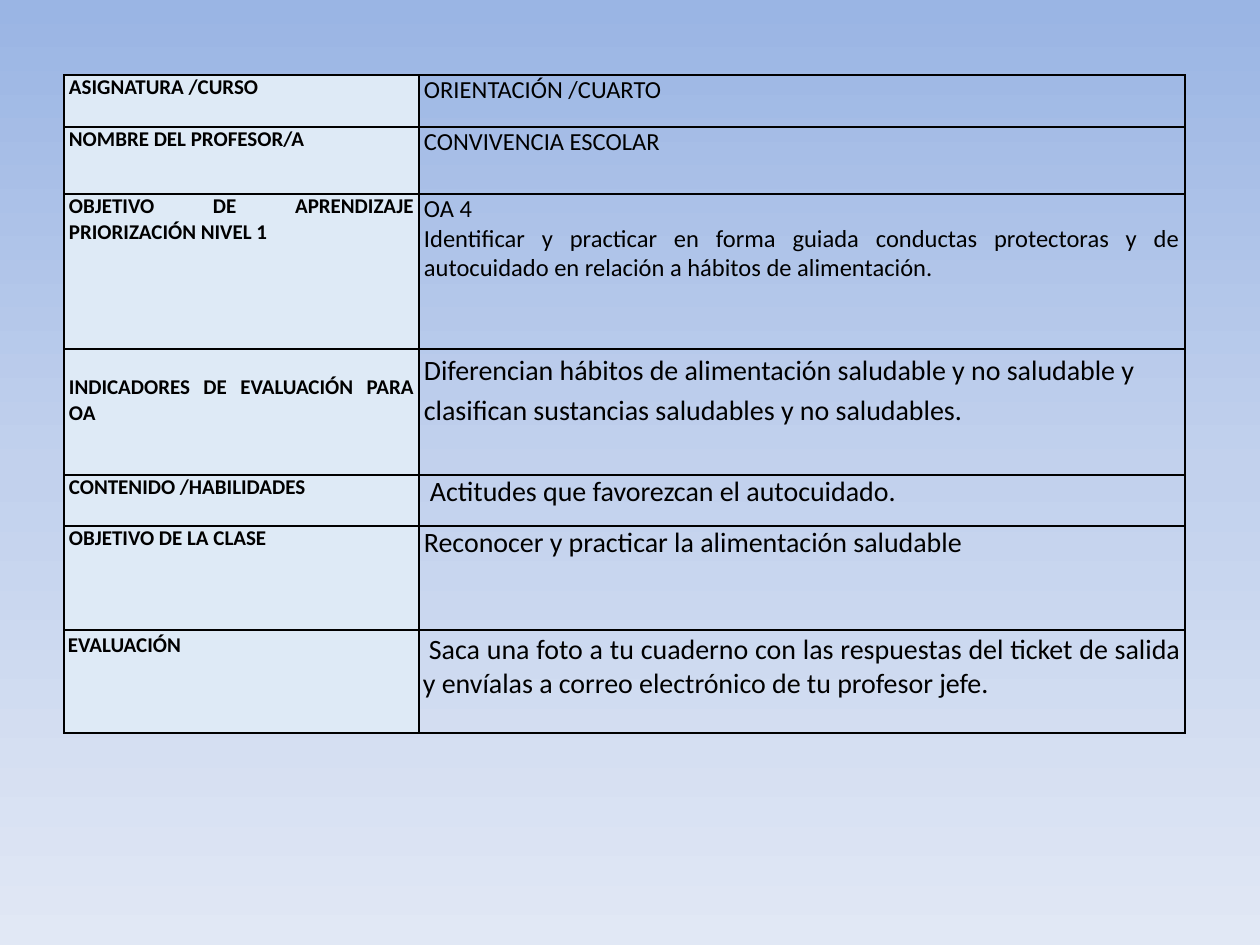
from lxml import etree
from pptx import Presentation
from pptx.dml.color import RGBColor
from pptx.enum import text
from pptx.oxml.ns import qn
from pptx.util import Emu, Pt

PX = 914400 // 126
COLORS = {"text": "000000", "border": "000000", "label": "DEEAF6",
          "bg_top": "9AB5E4", "bg_mid": "C2D1ED", "bg_bottom": "E1E8F5"}
FONT = "Calibri"
JUSTIFY, LEFT = text.PP_ALIGN.JUSTIFY, text.PP_ALIGN.LEFT

# Each row: height, label, content paragraphs, label format, content format
ROWS = [
    (52, "ASIGNATURA /CURSO", ["ORIENTACIÓN /CUARTO"], {}, {"size": 14}),
    (67, "NOMBRE DEL PROFESOR/A", ["CONVIVENCIA ESCOLAR"], {}, {"size": 14}),
    (155, "OBJETIVO DE APRENDIZAJE PRIORIZACIÓN NIVEL 1",
     ["OA 4", "Identificar y practicar en forma guiada conductas protectoras y de "
      "autocuidado en relación a hábitos de alimentación."], {}, {"size": 14}),
    (126, "INDICADORES DE EVALUACIÓN PARA OA",
     ["Diferencian hábitos de alimentación saludable y no saludable y "
      "clasifican sustancias saludables y no saludables."],
     {"top": 26}, {"align": LEFT, "spacing": 1.15}),
    (51, "CONTENIDO /HABILIDADES", ["Actitudes que favorezcan el autocuidado."],
     {}, {"indent": 6}),
    (104, "OBJETIVO DE LA CLASE", ["Reconocer y practicar la alimentación saludable"],
     {}, {}),
    (103, "EVALUACIÓN",
     ["Saca una foto a tu cuaderno con las respuestas del ticket de salida "
      "y envíalas a correo electrónico de tu profesor jefe."],
     {"side": 4, "top": 3}, {"side": 4, "top": 3, "indent": 6}),
]


def px(n):
    return Emu(n * PX)


def set_background(slide):
    fill = slide.background.fill
    fill.gradient()
    fill.gradient_angle = 270
    stops = slide.element.find(".//" + qn("a:gsLst"))
    for stop in list(stops):
        stops.remove(stop)
    for pos, name in ((0, "bg_top"), (50, "bg_mid"), (100, "bg_bottom")):
        stop = etree.SubElement(stops, qn("a:gs"), pos=str(pos * 1000))
        etree.SubElement(stop, qn("a:srgbClr"), val=COLORS[name])


def set_borders(cell, width=1):
    tc_pr = cell._tc.get_or_add_tcPr()
    for i, side in enumerate(("lnL", "lnR", "lnT", "lnB")):
        ln = etree.Element(qn("a:" + side), w=str(Pt(width)))
        fill = etree.SubElement(ln, qn("a:solidFill"))
        etree.SubElement(fill, qn("a:srgbClr"), val=COLORS["border"])
        tc_pr.insert(i, ln)


def write_cell(cell, lines, size=16, bold=False, align=JUSTIFY, spacing=None,
               indent=0, side=5, top=0):
    cell.margin_left = cell.margin_right = px(side)
    cell.margin_top = px(top)
    cell.margin_bottom = 0
    tf = cell.text_frame
    for i, line in enumerate(lines):
        p = tf.add_paragraph() if i else tf.paragraphs[0]
        p.alignment = align
        if spacing:
            p.line_spacing = spacing
        if indent:
            p._p.get_or_add_pPr().set("indent", str(px(indent)))
        r = p.add_run()
        r.text = line
        r.font.name, r.font.size, r.font.bold = FONT, Pt(size), bold
        r.font.color.rgb = RGBColor.from_string(COLORS["text"])


def add_plan_table(slide, left, top, label_width, content_width):
    height = sum(row[0] for row in ROWS)
    table = slide.shapes.add_table(len(ROWS), 2, px(left), px(top),
                                   px(label_width + content_width), px(height)).table
    table.first_row = table.horz_banding = False
    table.columns[0].width = px(label_width)
    table.columns[1].width = px(content_width)
    for i, (row_height, label, lines, label_fmt, content_fmt) in enumerate(ROWS):
        table.rows[i].height = px(row_height)
        label_cell, content_cell = table.cell(i, 0), table.cell(i, 1)
        # Label column
        label_cell.fill.solid()
        label_cell.fill.fore_color.rgb = RGBColor.from_string(COLORS["label"])
        write_cell(label_cell, [label], size=12, bold=True, **label_fmt)
        # Content column
        content_cell.fill.background()
        write_cell(content_cell, lines, **content_fmt)
        for cell in (label_cell, content_cell):
            set_borders(cell)


def main():
    prs = Presentation()
    prs.slide_width, prs.slide_height = px(1260), px(945)
    slide = prs.slides.add_slide(prs.slide_layouts[6])
    set_background(slide)
    add_plan_table(slide, 64, 75, 355, 766)
    prs.save("out.pptx")


if __name__ == "__main__":
    main()
